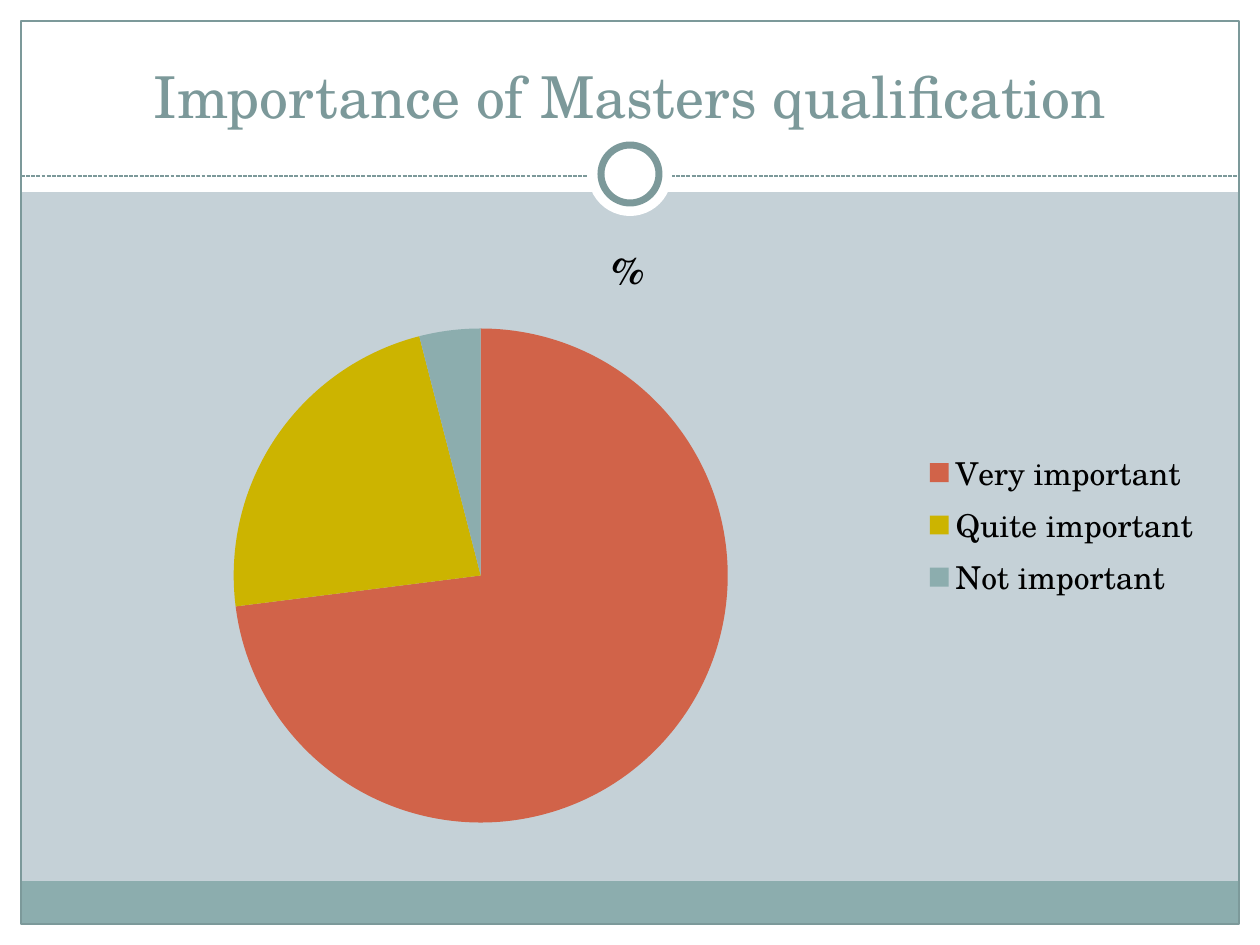
import pptx
import pptx.chart.data
import pptx.dml.color
import pptx.enum.chart
import pptx.enum.dml
import pptx.enum.shapes
import pptx.enum.text
import pptx.util
from lxml import etree

RGB = pptx.dml.color.RGBColor
WHITE = RGB(0xFF, 0xFF, 0xFF)
BLACK = RGB(0, 0, 0)
BACKGROUND = RGB(0xC5, 0xD1, 0xD7)
TEAL = RGB(0x8C, 0xAD, 0xAE)
DARK_TEAL = RGB(0x7C, 0x99, 0x9A)
RED = RGB(0xD1, 0x63, 0x49)
YELLOW = RGB(0xCC, 0xB4, 0x00)
FONT = "TeX Gyre Schola"

# Content
TITLE = "Importance of Masters qualification"
SERIES = "%"
ANSWERS = [
    ("Very important", 73, RED),
    ("Quite important", 23, YELLOW),
    ("Not important", 4, TEAL),
]

# Geometry in px, 126 to the inch
WIDTH, HEIGHT = 1260, 945
MARGIN = 21
INNER = WIDTH - 2 * MARGIN
HEADER = 192
FOOTER = 43
RULE_Y = 176
RING_CENTRE = (WIDTH // 2, 174)
TITLE_BOX = (42, 32, 1176, 104)
CHART_BOX = (42, 210, 1172, 630)

RECT = pptx.enum.shapes.MSO_SHAPE.RECTANGLE
OVAL = pptx.enum.shapes.MSO_SHAPE.OVAL


def px(length):
    return pptx.util.Emu(round(length * 914400 / 126))


def add_shape(page, kind, box, fill=None, line=None, weight=0.75):
    shape = page.shapes.add_shape(kind, *map(px, box))
    shape.shadow.inherit = False
    if fill is None:
        shape.fill.background()
    else:
        shape.fill.solid()
        shape.fill.fore_color.rgb = fill
    if line is None:
        shape.line.fill.background()
    else:
        shape.line.color.rgb = line
        shape.line.width = pptx.util.Pt(weight)


def add_circle(page, diameter, **style):
    x, y = RING_CENTRE
    box = (x - diameter / 2, y - diameter / 2, diameter, diameter)
    add_shape(page, OVAL, box, **style)


def set_font(font, size, color, bold=False):
    font.name = FONT
    font.size = pptx.util.Pt(size)
    font.bold = bold
    font.color.rgb = color


def write(frame, text, size, color, bold=False):
    para = frame.paragraphs[0]
    para.alignment = pptx.enum.text.PP_ALIGN.CENTER
    span = para.add_run()
    span.text = text
    set_font(span.font, size, color, bold)


def add_decoration(page):
    # White border, footer band and frame
    bottom = HEIGHT - MARGIN
    for box in [
        (0, bottom, WIDTH, MARGIN),
        (0, 0, WIDTH, HEADER),
        (0, 0, MARGIN, HEIGHT),
        (WIDTH - MARGIN, 0, MARGIN, HEIGHT),
    ]:
        add_shape(page, RECT, box, fill=WHITE)
    add_shape(page, RECT, (MARGIN, bottom - FOOTER, INNER, FOOTER), fill=TEAL)
    add_shape(page, RECT, (MARGIN, MARGIN, INNER, bottom - MARGIN), line=DARK_TEAL)

    # Dashed rule with the ring on it
    rule = page.shapes.add_connector(
        pptx.enum.shapes.MSO_CONNECTOR.STRAIGHT,
        px(MARGIN), px(RULE_Y), px(WIDTH - MARGIN), px(RULE_Y))
    rule.line.color.rgb = DARK_TEAL
    rule.line.width = pptx.util.Pt(0.75)
    rule.line.dash_style = pptx.enum.dml.MSO_LINE.SQUARE_DOT
    etree.SubElement(rule.element.spPr, pptx.oxml.ns.qn("a:effectLst"))
    add_circle(page, 84, fill=WHITE)
    add_circle(page, 58, fill=WHITE, line=DARK_TEAL, weight=4)


def add_title(page):
    title = page.shapes.title
    title.left, title.top, title.width, title.height = map(px, TITLE_BOX)
    frame = title.text_frame
    frame.word_wrap = True
    frame.auto_size = pptx.enum.text.MSO_AUTO_SIZE.NONE
    frame.vertical_anchor = pptx.enum.text.MSO_ANCHOR.BOTTOM
    write(frame, TITLE, 33, DARK_TEAL)
    # Bring the title in front of the white header
    title.element.getparent().append(title.element)


def add_pie(page):
    data = pptx.chart.data.CategoryChartData()
    data.categories = [name for name, value, color in ANSWERS]
    data.add_series(SERIES, [value for name, value, color in ANSWERS])
    chart = page.shapes.add_chart(
        pptx.enum.chart.XL_CHART_TYPE.PIE, *map(px, CHART_BOX), data).chart
    set_font(chart.font, 18, BLACK)
    chart.has_title = True
    write(chart.chart_title.text_frame, SERIES, 21.6, BLACK, bold=True)
    chart.chart_title.include_in_layout = False
    chart.has_legend = True
    chart.legend.position = pptx.enum.chart.XL_LEGEND_POSITION.RIGHT
    chart.legend.include_in_layout = False
    plot = chart.plots[0]
    plot.vary_by_categories = True
    for index, (name, value, color) in enumerate(ANSWERS):
        fill = plot.series[0].points[index].format.fill
        fill.solid()
        fill.fore_color.rgb = color


def main():
    deck = pptx.Presentation()
    deck.slide_width, deck.slide_height = px(WIDTH), px(HEIGHT)
    page = deck.slides.add_slide(deck.slide_layouts[5])
    page.background.fill.solid()
    page.background.fill.fore_color.rgb = BACKGROUND
    add_decoration(page)
    add_title(page)
    add_pie(page)
    deck.save("out.pptx")


if __name__ == "__main__":
    main()
